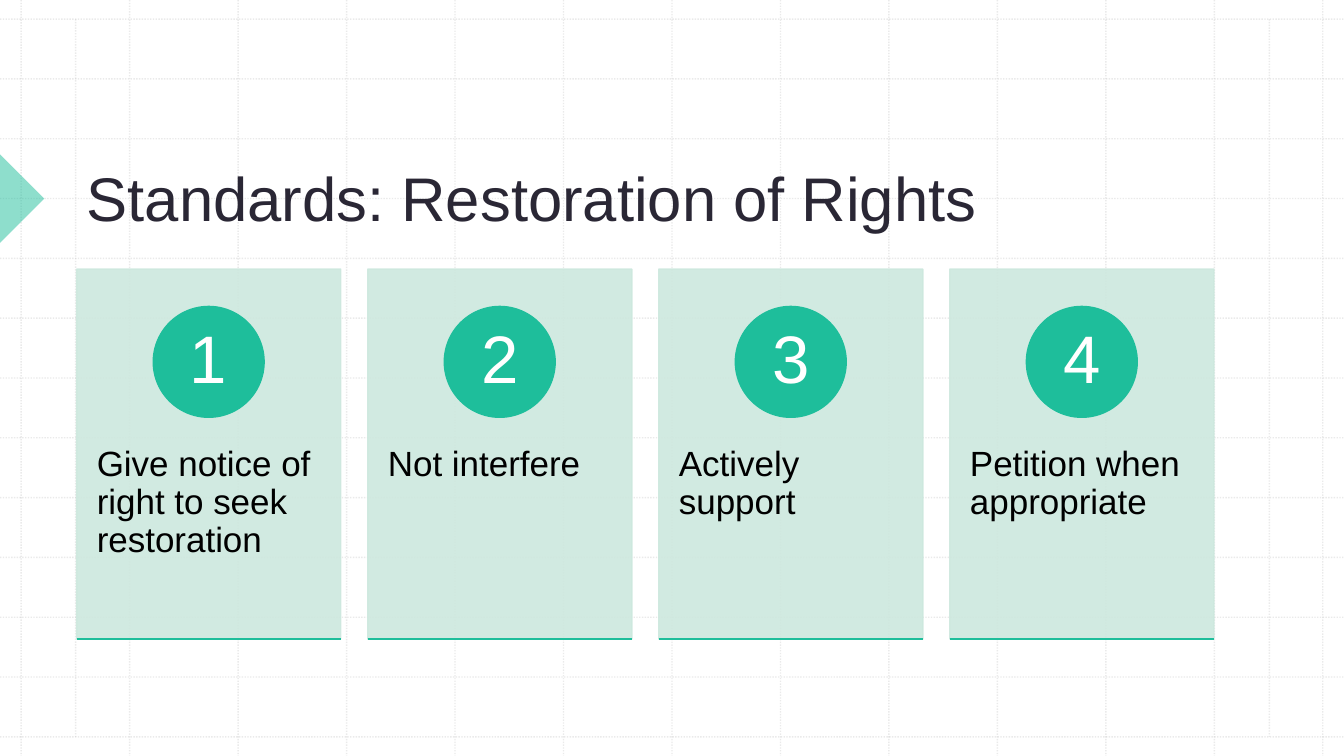
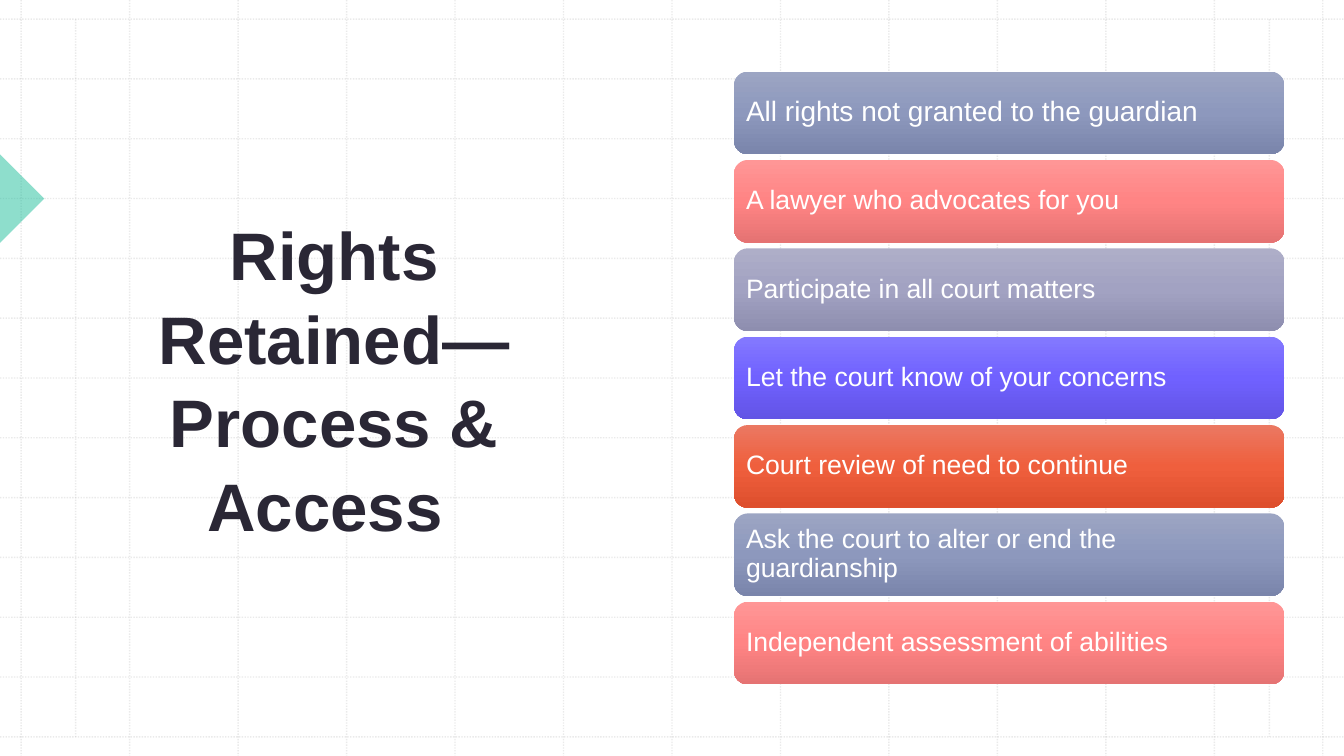
from dataclasses import dataclass

from lxml.etree import SubElement
from pptx import Presentation
from pptx.dml.color import RGBColor
from pptx.enum.dml import MSO_LINE
from pptx.enum.shapes import MSO_CONNECTOR, MSO_SHAPE
from pptx.enum.text import MSO_ANCHOR, MSO_AUTO_SIZE, PP_ALIGN
from pptx.oxml.ns import qn
from pptx.util import Inches, Pt


@dataclass(frozen=True)
class Theme:
    """Colours, font and type sizes of the deck."""
    font: str = "Arial"
    ink: str = "2A2735"
    black: str = "000000"
    white: str = "FFFFFF"
    grid: str = "BCBCBC"
    accent: str = "1EBE9B"
    card: str = "CDE8DE"
    title: int = 44
    side_title: int = 48
    number: int = 48
    card_text: int = 25
    lead_text: int = 20
    bar_text: int = 19
    slate: tuple = ("9CA5C3", "8D98BD", "7A85AB")
    coral: tuple = ("FF9696", "FF8484", "E57373")
    mauve: tuple = ("AEAEC8", "A2A2C2", "8E8EAF")
    violet: tuple = ("8479FF", "7061FF", "6254E5")
    orange: tuple = ("EB7862", "EF5F3D", "DE4F2D")


T = Theme()
SLIDE_W, SLIDE_H = 13.33, 7.5
STEPS = ["Give notice of right to seek restoration", "Not interfere",
         "Actively support", "Petition when appropriate"]
RIGHTS = [
    ("All rights not granted to the guardian", T.slate, T.lead_text),
    ("A lawyer who advocates for you", T.coral, T.bar_text),
    ("Participate in all court matters", T.mauve, T.bar_text),
    ("Let the court know of your concerns", T.violet, T.bar_text),
    ("Court review of need to continue", T.orange, T.bar_text),
    ("Ask the court to alter or end the guardianship", T.slate, T.bar_text),
    ("Independent assessment of abilities", T.coral, T.bar_text),
]


def put(obj, **values):
    """Set each named attribute of an object."""
    for name, value in values.items():
        setattr(obj, name, value)


def set_alpha(fill, parent, percent):
    """Paint a solid fill's colour partly transparent."""
    for clr in parent.findall(f"{qn('a:solidFill')}/{qn('a:srgbClr')}"):
        SubElement(clr, qn("a:alpha"), val=str(percent * 1000))


def write(sp, text, size, color, align=PP_ALIGN.LEFT, anchor=MSO_ANCHOR.MIDDLE,
          spacing=0.9, bold=False, margins=(0.1, 0.05, 0.1, 0.05)):
    """Fill a shape with one formatted paragraph."""
    tf = sp.text_frame
    left, top, right, bottom = map(Inches, margins)
    put(tf, word_wrap=True, auto_size=MSO_AUTO_SIZE.NONE, vertical_anchor=anchor,
        margin_left=left, margin_top=top, margin_right=right, margin_bottom=bottom)
    p = tf.paragraphs[0]
    put(p, alignment=align, line_spacing=spacing)
    r = p.add_run()
    r.text = text
    put(r.font, name=T.font, size=Pt(size), bold=bold)
    r.font.color.rgb = RGBColor.from_string(color)


def add_shape(s, kind, box, color=None, alpha=None, outline=False):
    """Add a flat preset shape with an optional solid fill and outline."""
    sp = s.shapes.add_shape(kind, *map(Inches, box))
    sp.shadow.inherit = False
    sp.line.fill.background()
    if color:
        sp.fill.solid()
        sp.fill.fore_color.rgb = RGBColor.from_string(color)
    if outline:
        sp.line.color.rgb = RGBColor.from_string(color)
        sp.line.width = Pt(1)
    if alpha:
        spPr = sp.element.spPr
        set_alpha(sp.fill, spPr, alpha)
        if outline:
            set_alpha(sp.line.fill, spPr.find(qn("a:ln")), alpha)
    return sp


def add_line(s, x1, y1, x2, y2, color):
    """Add a straight one-point line without a shadow."""
    ln = s.shapes.add_connector(MSO_CONNECTOR.STRAIGHT, *map(Inches, (x1, y1, x2, y2)))
    ln.line.color.rgb = RGBColor.from_string(color)
    ln.line.width = Pt(1)
    SubElement(ln.element.spPr, qn("a:effectLst"))
    return ln


def add_grid_line(s, *ends):
    """Add one faint dotted line of the background grid."""
    ln = add_line(s, *ends, T.grid)
    ln.line.dash_style = MSO_LINE.ROUND_DOT
    set_alpha(ln.line.fill, ln.element.spPr.find(qn("a:ln")), 30)


def add_backdrop(s):
    """Draw the grid and side arrow, then move them to the slide's layout."""
    first = len(s.shapes)
    top, bottom, left, right = 0.19, 7.31, 0.21, 13.12
    for i in range(13):
        x = left + i * (right - left) / 12
        y = top + i * (bottom - top) / 12
        add_grid_line(s, x, 0, x, SLIDE_H)
        add_grid_line(s, 0, y, SLIDE_W, y)
    for x in (0.75, 12.59):
        add_grid_line(s, x, top, x, bottom)
    arrow = add_shape(s, MSO_SHAPE.RIGHT_TRIANGLE, (-0.31, 1.66, 0.62, 0.62), T.accent, 50)
    arrow.rotation = 225
    for sp in list(s.shapes)[first:]:
        s.slide_layout.shapes.element.append(sp.element)


def set_title(s, box, text, size, **style):
    """Place and format the title placeholder."""
    left, top, width, height = map(Inches, box)
    title = s.shapes.title
    put(title, left=left, top=top, width=width, height=height)
    write(title, text, size, T.ink, **style)


def add_card(s, box, number, text):
    """Draw a numbered card with a rule along its foot."""
    x, y, w, h = box
    d = 1.1
    card = add_shape(s, MSO_SHAPE.RECTANGLE, box, T.card, 90, outline=True)
    write(card, text, T.card_text, T.black, anchor=MSO_ANCHOR.TOP,
          margins=(0.2, 1.76, 0.2, 0.36))
    disc = add_shape(s, MSO_SHAPE.OVAL, (x + (w - d) / 2, y + 0.37, d, d), T.accent, outline=True)
    write(disc, str(number), T.number, T.white, align=PP_ALIGN.CENTER,
          margins=(0.09, 0.01, 0.09, 0.01))
    add_line(s, x, y + h, x + w, y + h, T.accent)


def add_cards(s, box, texts):
    """Spread numbered cards evenly across the box."""
    x, y, w, h = box
    card_w = 2.62
    pitch = (w - card_w) / (len(texts) - 1)
    for i, text in enumerate(texts):
        add_card(s, (x + i * pitch, y, card_w, h), i + 1, text)


def add_bar(s, box, text, colors, size):
    """Draw a rounded bar with a top-to-bottom gradient."""
    bar = add_shape(s, MSO_SHAPE.ROUNDED_RECTANGLE, box)
    bar.fill.gradient()
    bar.fill.gradient_angle = 270
    stops = bar.element.spPr.find(f"{qn('a:gradFill')}/{qn('a:gsLst')}")
    for gs in list(stops):
        stops.remove(gs)
    for i, color in enumerate(colors):
        gs = SubElement(stops, qn("a:gs"), pos=str(i * 50000))
        SubElement(gs, qn("a:srgbClr"), val=color)
    write(bar, text, size, T.white, margins=(0.08,) * 4)


def add_bars(s, box, items):
    """Stack bars evenly down the box."""
    x, y, w, h = box
    bar_h = 0.82
    pitch = (h - bar_h) / (len(items) - 1)
    for i, item in enumerate(items):
        add_bar(s, (x, y + i * pitch, w, bar_h), *item)


def standards_slide(s):
    """Build the slide of four numbered standards."""
    set_title(s, (0.76, 0.79, 11.29, 1.58), "Standards: Restoration of Rights",
              T.title, anchor=MSO_ANCHOR.BOTTOM, spacing=1.0)
    add_cards(s, (0.76, 2.67, 11.28, 3.67), STEPS)


def rights_slide(s):
    """Build the slide of retained rights."""
    set_title(s, (1.18, 1.18, 4.27, 5.13), "Rights Retained—Process & Access ",
              T.side_title, align=PP_ALIGN.CENTER, spacing=1.04, bold=True)
    add_bars(s, (7.28, 0.71, 5.46, 6.08), RIGHTS)


def main():
    """Build and save the deck."""
    prs = Presentation()
    put(prs, slide_width=Inches(SLIDE_W), slide_height=Inches(SLIDE_H))
    layout = prs.slide_layouts[5]
    for i, build in enumerate((standards_slide, rights_slide)):
        s = prs.slides.add_slide(layout)
        if i == 0:
            add_backdrop(s)
        build(s)
    prs.save("out.pptx")


if __name__ == "__main__":
    main()
